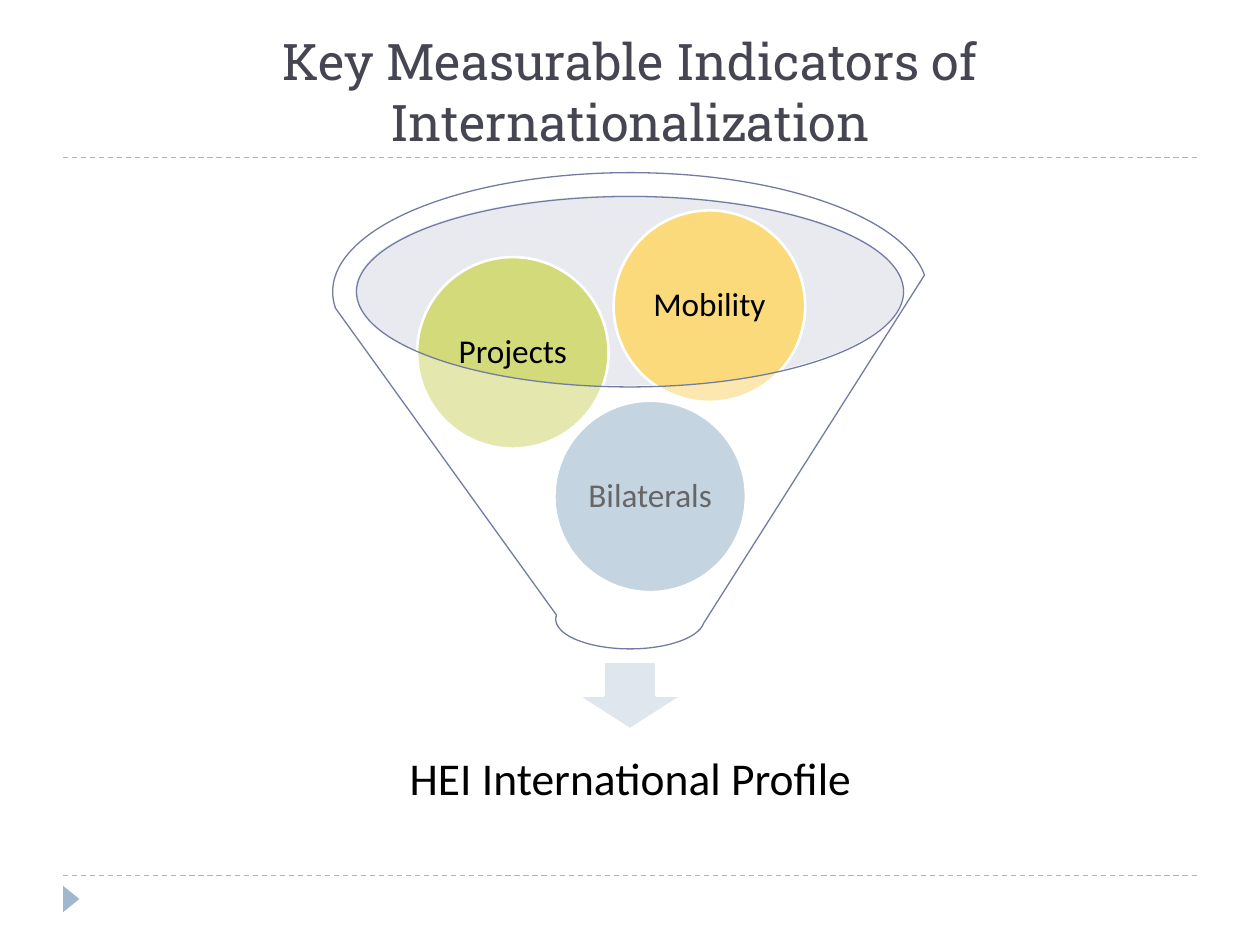
from dataclasses import dataclass

from lxml.etree import SubElement
from pptx import Presentation
from pptx.dml.color import RGBColor
from pptx.enum.dml import MSO_LINE
from pptx.enum.shapes import MSO_CONNECTOR, MSO_SHAPE
from pptx.enum.text import MSO_ANCHOR, PP_ALIGN
from pptx.oxml.ns import qn
from pptx.util import Inches, Pt


@dataclass(frozen=True)
class Theme:
    """Colours, fonts and type sizes of the slide."""
    title: str = "464653"
    text: str = "000000"
    white: str = "FFFFFF"
    outline: str = "727CA3"
    rim: str = "C9CCD7"
    arrow: str = "DFE6ED"
    blue: str = "9FB8CD"
    green: str = "D2DA7A"
    yellow: str = "FADA7A"
    title_font: str = "Roboto Slab"
    body_font: str = "Calibri"
    title_size: float = 28.8
    profile_size: float = 26
    ball_size: float = 19


@dataclass(frozen=True)
class Box:
    """A rectangle in inches."""
    left: float
    top: float
    width: float
    height: float

    def inner(self, dx, dy, width, height):
        """Return a box offset from this one's top left corner."""
        return Box(self.left + dx, self.top + dy, width, height)

    def lengths(self):
        """Return left, top, width and height as lengths."""
        return [Inches(v) for v in (self.left, self.top, self.width, self.height)]


THEME = Theme()


def write_text(holder, text, *, size, font=THEME.body_font, color=THEME.text,
               anchor=MSO_ANCHOR.MIDDLE, insets=(0.1, 0.05), spacing=0.9, wrap=True):
    """Write one centred paragraph into a shape or text box."""
    frame = holder.text_frame
    frame.word_wrap = wrap
    frame.vertical_anchor = anchor
    frame.margin_left = frame.margin_right = Inches(insets[0])
    frame.margin_top = frame.margin_bottom = Inches(insets[1])
    paragraph = frame.paragraphs[0]
    paragraph.alignment = PP_ALIGN.CENTER
    paragraph.line_spacing = spacing
    run = paragraph.add_run()
    run.text = text
    run.font.size = Pt(size)
    run.font.name = font
    run.font.color.rgb = RGBColor.from_string(color)


def add_preset(slide, preset, box, fill, line=None, line_width=1.5, opacity=None):
    """Add a flat preset shape with an optional outline and opacity percentage."""
    shape = slide.shapes.add_shape(preset, *box.lengths())
    shape.shadow.inherit = False
    shape.fill.solid()
    shape.fill.fore_color.rgb = RGBColor.from_string(fill)
    if opacity is not None:
        color = shape.fill._xPr.find(qn("a:solidFill"))[0]
        SubElement(color, qn("a:alpha"), val=str(opacity * 1000))
    if line:
        shape.line.color.rgb = RGBColor.from_string(line)
        shape.line.width = Pt(line_width)
    else:
        shape.line.fill.background()
    return shape


def add_frame(slide, box):
    """Add dashed rules at the box's top and bottom and the footer marker."""
    for y in (box.top, box.top + box.height):
        rule = slide.shapes.add_connector(
            MSO_CONNECTOR.STRAIGHT, Inches(box.left), Inches(y),
            Inches(box.left + box.width), Inches(y))
        rule.line.color.rgb = RGBColor.from_string(THEME.blue)
        rule.line.width = Pt(0.75)
        rule.line.dash_style = MSO_LINE.DASH
        SubElement(rule._element.spPr, qn("a:effectLst"))
    marker = add_preset(slide, MSO_SHAPE.ISOSCELES_TRIANGLE,
                        box.inner(-0.04, box.height + 0.12, 0.21, 0.13), THEME.blue)
    marker.rotation = 90


def add_title(slide, box):
    """Add the slide heading."""
    heading = slide.shapes.add_textbox(*box.lengths())
    write_text(heading, "Key Measurable Indicators of Internationalization",
               size=THEME.title_size, font=THEME.title_font, color=THEME.title,
               anchor=MSO_ANCHOR.BOTTOM, spacing=1.0)


def add_funnel(slide, box):
    """Add the indicators in a funnel, the arrow and the resulting profile."""
    add_preset(slide, MSO_SHAPE.OVAL, box.inner(0.18, 0.18, 4.35, 1.51),
               THEME.rim, opacity=40)
    add_preset(slide, MSO_SHAPE.DOWN_ARROW, box.inner(1.94, 3.88, 0.84, 0.54),
               THEME.arrow, THEME.white)
    profile = slide.shapes.add_textbox(*box.inner(0.34, 4.32, 4.05, 1.01).lengths())
    write_text(profile, "HEI International Profile", size=THEME.profile_size,
               insets=(0.2, 0.2))
    indicators = (
        ("Bilaterals", 1.76, 1.81, THEME.blue),
        ("Projects", 0.67, 0.67, THEME.green),
        ("Mobility", 2.23, 0.30, THEME.yellow),
    )
    for name, dx, dy, color in indicators:
        ball = add_preset(slide, MSO_SHAPE.OVAL, box.inner(dx, dy, 1.52, 1.52),
                          color, THEME.white)
        write_text(ball, name, size=THEME.ball_size, insets=(0.03, 0.03), wrap=False)
    add_preset(slide, MSO_SHAPE.FUNNEL, box, THEME.white, THEME.outline, 0.75, 40)


def main():
    """Build and save the slide."""
    deck = Presentation()
    deck.slide_width, deck.slide_height = Inches(10), Inches(7.5)
    slide = deck.slides.add_slide(deck.slide_layouts[6])
    add_frame(slide, Box(0.5, 1.25, 9, 5.7))
    add_title(slide, Box(0.5, 0.17, 9, 1.08))
    add_funnel(slide, Box(2.64, 1.37, 4.72, 3.78))
    deck.save("out.pptx")


if __name__ == "__main__":
    main()
